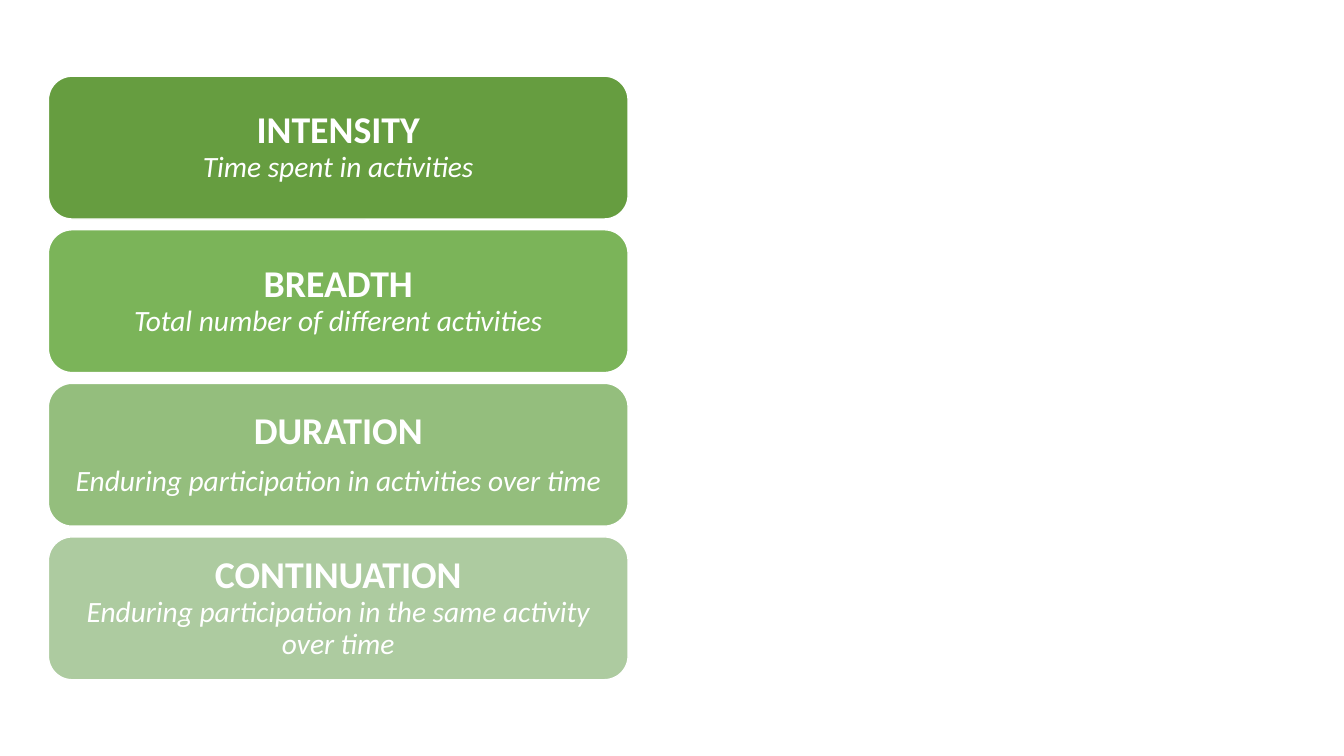
from dataclasses import dataclass

from pptx import Presentation
from pptx.dml.color import RGBColor
from pptx.enum.shapes import MSO_SHAPE
from pptx.enum.text import MSO_ANCHOR, PP_ALIGN
from pptx.util import Cm, Pt

ROUNDED = MSO_SHAPE.ROUNDED_RECTANGLE
MIDDLE = MSO_ANCHOR.MIDDLE
CENTER = PP_ALIGN.CENTER


@dataclass(frozen=True)
class Theme:
    font: str = "Calibri"
    white: str = "FFFFFF"
    greens: tuple = ("669D40", "7BB459", "94BE7D", "ADCBA0")
    heading_size: int = 27
    detail_size: int = 21


def apply(target, formats):
    for name, value in formats.items():
        setattr(target, name, value)


class DimensionSlide:
    def __init__(self, slide, theme):
        self.slide = slide
        self.theme = theme
        self.white = RGBColor.from_string(theme.white)

    def run(self, paragraph, text, **formats):
        run = paragraph.add_run()
        run.text = text
        apply(run.font, {"name": self.theme.font, **formats})
        run.font.color.rgb = self.white

    def paragraph_format(self, paragraph, space_after=0):
        apply(paragraph, {"alignment": CENTER, "line_spacing": 0.9,
                          "space_after": Pt(space_after)})

    def card(self, left, top, width, height, fill):
        card = self.slide.shapes.add_shape(
            ROUNDED, Cm(left), Cm(top), Cm(width), Cm(height))
        card.shadow.inherit = False
        card.fill.solid()
        card.fill.fore_color.rgb = RGBColor.from_string(fill)
        card.line.color.rgb = self.white
        card.line.width = Pt(1)
        margins = ("margin_left", "margin_top", "margin_right", "margin_bottom")
        apply(card.text_frame, {"word_wrap": True, "vertical_anchor": MIDDLE,
                                **dict.fromkeys(margins, Cm(0.28))})
        return card.text_frame

    def caption(self, frame, heading, detail, separate):
        paragraph = frame.paragraphs[0]
        self.paragraph_format(paragraph, 10 if separate else 0)
        self.run(paragraph, heading, size=Pt(self.theme.heading_size), bold=True)
        if separate:
            paragraph = frame.add_paragraph()
            self.paragraph_format(paragraph)
        else:
            paragraph.add_line_break()
        self.run(paragraph, detail, size=Pt(self.theme.detail_size), italic=True)


DIMENSIONS = (
    ("INTENSITY", "Time spent in activities", False),
    ("BREADTH", "Total number of different activities", False),
    ("DURATION", "Enduring participation in activities over time", True),
    ("CONTINUATION", "Enduring participation in the same activity over time", False),
)
LEFT, TOP, WIDTH, HEIGHT, GAP = 1.22, 1.92, 14.61, 3.6, 0.27


def main():
    presentation = Presentation()
    presentation.slide_width = Cm(33.87)
    presentation.slide_height = Cm(19.05)
    slide = presentation.slides.add_slide(presentation.slide_layouts[6])
    theme = Theme()
    dimensions = DimensionSlide(slide, theme)
    for index, (caption, green) in enumerate(zip(DIMENSIONS, theme.greens)):
        top = TOP + index * (HEIGHT + GAP)
        frame = dimensions.card(LEFT, top, WIDTH, HEIGHT, green)
        dimensions.caption(frame, *caption)
    presentation.save("out.pptx")


if __name__ == "__main__":
    main()
